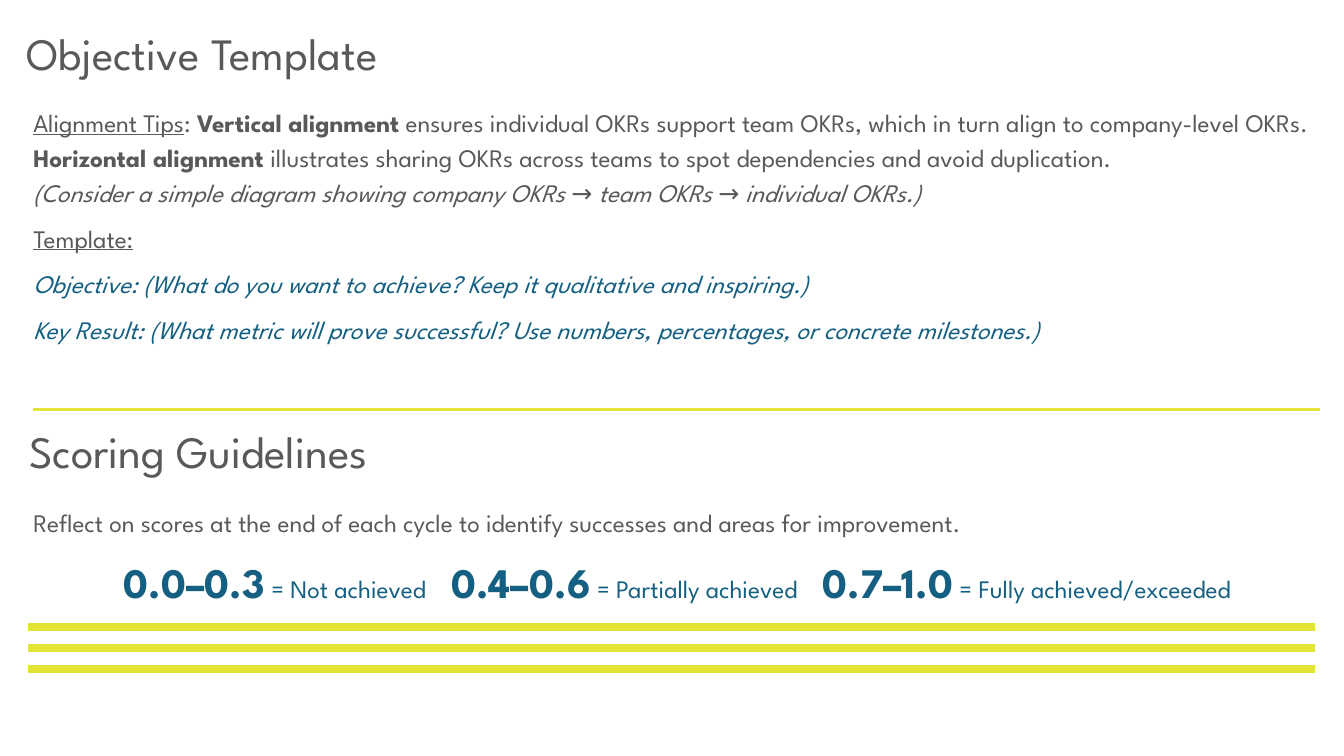
import copy
from dataclasses import dataclass

import lxml.etree
import pptx
import pptx.dml.color
import pptx.enum.shapes
import pptx.enum.text
import pptx.oxml.ns
import pptx.util

FONT = "League Spartan"
COLOURS = {"grey": "595959", "blue": "156082", "lime": "E3E335"}
HEADING_SIZE, BODY_SIZE, SCORE_SIZE = 32, 18, 30
SCORE_GAP = 13.4


@dataclass(frozen=True)
class Phrase:
    text: str
    colour: str = "grey"
    size: float = BODY_SIZE
    bold: bool = False
    italic: bool = False
    underline: bool = False
    line_break: bool = False
    tracking: float = 0


@dataclass(frozen=True)
class Box:
    left: float
    top: float
    width: float
    height: float


@dataclass(frozen=True)
class Rule:
    left: float
    y: float
    weight: float


@dataclass(frozen=True)
class Score:
    band: str
    meaning: str


RULE_WIDTH = 919.44
RULES = [Rule(23.76, 292.32, 2.25)] + [Rule(20.16, 447.84 + 15.12 * i, 6) for i in range(3)]

SCORES = [
    Score("0.0–0.3", "Not achieved"),
    Score("0.4–0.6", "Partially achieved"),
    Score("0.7–1.0", "Fully achieved/exceeded"),
]

TEMPLATE_LINES = [
    [
        Phrase("Alignment Tips", underline=True),
        Phrase(": "),
        Phrase("Vertical alignment", bold=True),
        Phrase(" ensures individual OKRs support team OKRs, which in turn align to company-level OKRs. "),
        Phrase("Horizontal alignment", bold=True),
        Phrase(
            " illustrates sharing OKRs across teams to spot dependencies and avoid duplication.",
            line_break=True,
        ),
        Phrase(
            "(Consider a simple diagram showing company OKRs → team OKRs → individual OKRs.)",
            italic=True,
        ),
    ],
    [Phrase("Template:", underline=True)],
    [
        Phrase(
            "Objective: (What do you want to achieve? Keep it qualitative and inspiring.)",
            "blue",
            italic=True,
        )
    ],
    [
        Phrase(
            "Key Result: (What metric will prove successful? "
            "Use numbers, percentages, or concrete milestones.)",
            "blue",
            italic=True,
        )
    ],
]
REFLECTION = [
    Phrase("Reflect on scores at the end of each cycle to identify successes and areas for improvement.")
]


def score_phrases(scores: list[Score]) -> list[Phrase]:
    """Join the score bands on one line, a widened space between each two."""
    phrases = []
    for score in scores:
        if phrases:
            phrases.append(Phrase(" ", "blue", tracking=SCORE_GAP))
        phrases.append(Phrase(score.band, "blue", SCORE_SIZE, bold=True))
        phrases.append(Phrase(f" = {score.meaning}", "blue"))
    return phrases


def rgb(name: str) -> pptx.dml.color.RGBColor:
    return pptx.dml.color.RGBColor.from_string(COLOURS[name])


def place(shape, box: Box) -> None:
    shape.left, shape.top = pptx.util.Pt(box.left), pptx.util.Pt(box.top)
    shape.width, shape.height = pptx.util.Pt(box.width), pptx.util.Pt(box.height)
    frame = shape.text_frame
    frame.word_wrap = True
    frame.auto_size = pptx.enum.text.MSO_AUTO_SIZE.NONE
    frame.vertical_anchor = pptx.enum.text.MSO_ANCHOR.TOP


def format_run(run, phrase: Phrase) -> None:
    font = run.font
    font.name = FONT
    font.size = pptx.util.Pt(phrase.size)
    font.color.rgb = rgb(phrase.colour)
    font.bold, font.italic, font.underline = phrase.bold, phrase.italic, phrase.underline
    if phrase.tracking:
        run._r.get_or_add_rPr().set("spc", str(round(phrase.tracking * 100)))


def write_heading(shape, text: str, box: Box) -> None:
    place(shape, box)
    shape.text_frame.text = text
    paragraph = shape.text_frame.paragraphs[0]
    paragraph.alignment = pptx.enum.text.PP_ALIGN.LEFT
    format_run(paragraph.runs[0], Phrase(text, size=HEADING_SIZE))


def write_paragraph(paragraph, phrases: list[Phrase]) -> None:
    paragraph.alignment = pptx.enum.text.PP_ALIGN.LEFT
    paragraph.line_spacing = 1.15
    paragraph.space_before = pptx.util.Pt(0)
    paragraph.space_after = pptx.util.Pt(8)
    properties = paragraph._p.get_or_add_pPr()
    properties.set("marL", "0")
    properties.set("indent", "0")
    lxml.etree.SubElement(properties, pptx.oxml.ns.qn("a:buNone"))
    for phrase in phrases:
        run = paragraph.add_run()
        run.text = phrase.text
        format_run(run, phrase)
        if phrase.line_break:
            paragraph.add_line_break()
            paragraph._p[-1].append(copy.deepcopy(run._r.rPr))


def write_body(shape, lines: list[list[Phrase]], box: Box) -> None:
    place(shape, box)
    frame = shape.text_frame
    for index, phrases in enumerate(lines):
        write_paragraph(frame.add_paragraph() if index else frame.paragraphs[0], phrases)


def draw_rule(slide, rule: Rule) -> None:
    y = pptx.util.Pt(rule.y)
    line = slide.shapes.add_connector(
        pptx.enum.shapes.MSO_CONNECTOR.STRAIGHT,
        pptx.util.Pt(rule.left), y, pptx.util.Pt(rule.left + RULE_WIDTH), y,
    )
    line.line.color.rgb = rgb("lime")
    line.line.width = pptx.util.Pt(rule.weight)
    lxml.etree.SubElement(line._element.spPr, pptx.oxml.ns.qn("a:effectLst"))


def main() -> None:
    deck = pptx.Presentation()
    deck.slide_width, deck.slide_height = pptx.util.Pt(960), pptx.util.Pt(540)
    slide = deck.slides.add_slide(deck.slide_layouts.get_by_name("Two Content"))
    title, template, scoring = list(slide.placeholders)[:3]

    write_heading(title, "Objective Template", Box(11.52, 15.12, 948.24, 46.08))
    write_body(template, TEMPLATE_LINES, Box(16.56, 69.84, 926.64, 205.92))

    scoring_heading = slide.shapes.add_textbox(0, 0, 0, 0)
    write_heading(scoring_heading, "Scoring Guidelines", Box(13.68, 298.8, 948.24, 46.08))
    write_body(scoring, [REFLECTION, score_phrases(SCORES)], Box(16.56, 355.68, 934.56, 80.64))
    scoring.text_frame.paragraphs[1].alignment = pptx.enum.text.PP_ALIGN.CENTER

    for rule in RULES:
        draw_rule(slide, rule)
    deck.save("out.pptx")


if __name__ == "__main__":
    main()
